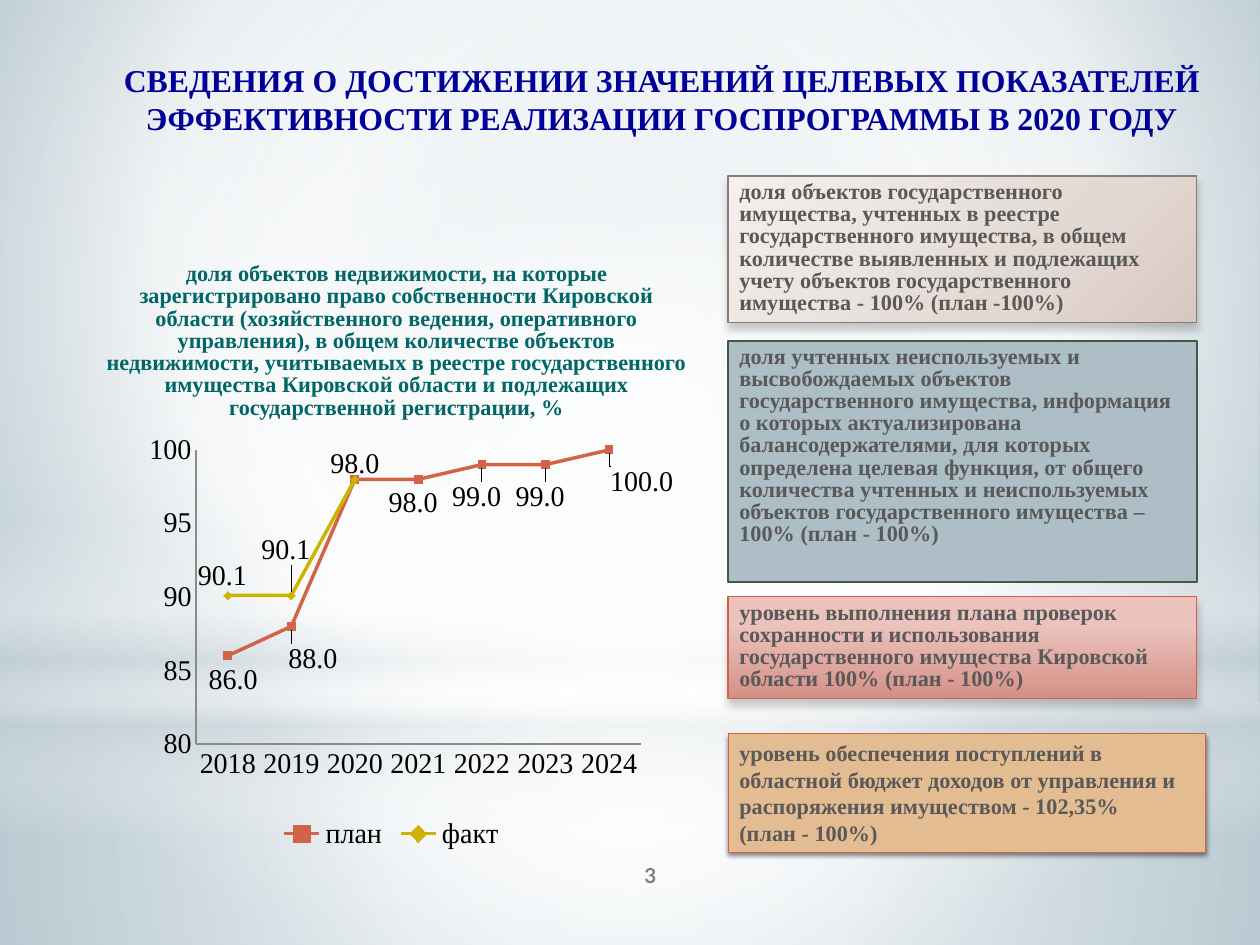
from lxml import etree
from pptx import Presentation
from pptx import util as u
from pptx.chart.data import CategoryChartData
from pptx.dml.color import RGBColor
from pptx.enum import chart as ch, shapes, text
from pptx.oxml import parse_xml
from pptx.oxml.ns import nsdecls, qn

COLORS = {
    "white": "FFFFFF", "mist": "C5D1D7", "bg_inner": "B8CAD3", "bg_outer": "8FAEBD",
    "title": "000099", "chart_title": "006666", "body": "595959", "number": "808080",
    "black": "000000", "axis": "8B8B8B", "plan": "D16349", "fact": "CCB400",
    "sand_dark": "D7C9C1", "sand_mid": "E3D9D3", "sand_light": "F4F0EE", "sand_line": "8C7B70",
    "blue_grey": "ADBEC6", "green_line": "445843",
    "pink": "ECC2BD", "rose": "D49087", "orange": "E3BC92",
}
RGB = {name: RGBColor.from_string(value) for name, value in COLORS.items()}
SERIF = "Times New Roman"


def set_gradient(properties, stops, angle=None, focus=(50, 50, 50, 50)):
    """Swap an empty fill for a linear (angle) or circular (focus) gradient."""
    marks = "".join(
        f'<a:gs pos="{pos * 1000}"><a:srgbClr val="{COLORS[color]}">'
        f'<a:alpha val="{alpha * 1000}"/></a:srgbClr></a:gs>'
        for pos, color, alpha in stops)
    if angle is None:
        left, top, right, bottom = (side * 1000 for side in focus)
        course = (f'<a:path path="circle"><a:fillToRect l="{left}" t="{top}" '
                  f'r="{right}" b="{bottom}"/></a:path>')
    else:
        course = f'<a:lin ang="{angle * 60000}" scaled="0"/>'
    empty = properties.find(qn("a:noFill"))
    properties.replace(empty, parse_xml(
        f'<a:gradFill {nsdecls("a")} rotWithShape="1"><a:gsLst>{marks}</a:gsLst>{course}</a:gradFill>'))


def write(shape, paragraphs, size, color, font=SERIF, align=text.PP_ALIGN.LEFT,
          spacing=None, before=0, anchor=text.MSO_ANCHOR.TOP, side=0.1, edge=0.05):
    frame = shape.text_frame
    frame.text = "\n".join(paragraphs)
    frame_format = {"word_wrap": True, "vertical_anchor": anchor,
                    "margin_left": u.Inches(side), "margin_right": u.Inches(side),
                    "margin_top": u.Inches(edge), "margin_bottom": u.Inches(edge)}
    for key, value in frame_format.items():
        setattr(frame, key, value)
    font_format = {"size": u.Pt(size), "name": font, "bold": True}
    for paragraph in frame.paragraphs:
        paragraph.alignment = align
        paragraph.space_before = u.Pt(before)
        if spacing:
            paragraph.line_spacing = u.Pt(spacing)
        for run in paragraph.runs:
            for key, value in font_format.items():
                setattr(run.font, key, value)
            run.font.color.rgb = RGB[color]


# Slide of 28 by 21 cm
deck = Presentation()
deck.slide_width, deck.slide_height = u.Inches(28 / 2.54), u.Inches(21 / 2.54)
slide = deck.slides.add_slide(deck.slide_layouts[6])

# Background and its light layers
slide.background.fill.background()
set_gradient(slide.element.find(".//" + qn("p:bgPr")),
             [(0, "bg_inner", 100), (60, "white", 100), (100, "bg_outer", 100)],
             focus=(20, 10, 20, 60))
RECT, OVAL = shapes.MSO_SHAPE.RECTANGLE, shapes.MSO_SHAPE.OVAL
layers = [
    (RECT, 6.15, 2.11, [(0, "white", 91), (37, "white", 76), (100, "mist", 79)], None),
    (RECT, 0, 6.15, [(0, "white", 89), (48, "white", 62), (100, "mist", 79)], None),
    (RECT, 4.54, 2.76, [(0, "white", 0), (29, "white", 30), (45, "mist", 40),
                        (55, "white", 26), (65, "mist", 60), (100, "white", 0)], 90),
    (OVAL, 1.93, 6.15, [(0, "white", 100), (56, "white", 0)], None),
]
for outline, top, height, stops, angle in layers:
    layer = slide.shapes.add_shape(outline, 0, u.Inches(top), deck.slide_width, u.Inches(height))
    layer.shadow.inherit = False
    layer.line.fill.background()
    layer.fill.background()
    set_gradient(layer.element.spPr, stops, angle)

# Title, chart heading and page number
CENTER = text.PP_ALIGN.CENTER
captions = [
    ((0.83, 0.47, 9.92, 0.78),
     "СВЕДЕНИЯ О ДОСТИЖЕНИИ ЗНАЧЕНИЙ ЦЕЛЕВЫХ ПОКАЗАТЕЛЕЙ ЭФФЕКТИВНОСТИ РЕАЛИЗАЦИИ "
     "ГОСПРОГРАММЫ В 2020 ГОДУ",
     {"size": 20, "color": "title", "side": 0.11, "edge": 0.06}),
    ((0.83, 2.26, 5.28, 1.48),
     "доля объектов недвижимости, на которые зарегистрировано право собственности Кировской "
     "области (хозяйственного ведения, оперативного управления), в общем количестве объектов "
     "недвижимости, учитываемых в реестре государственного имущества Кировской области и "
     "подлежащих государственной регистрации, %",
     {"size": 14, "color": "chart_title", "spacing": 14, "before": 3}),
    ((4.59, 7.44, 2.2, 0.44), "3",
     {"size": 13, "color": "number", "font": "Lato", "anchor": text.MSO_ANCHOR.MIDDLE}),
]
for place, words, style in captions:
    caption = slide.shapes.add_textbox(*map(u.Inches, place))
    write(caption, [words], align=CENTER, **style)

# Indicator boxes: place, fill, line, shadow (opacity, blur, distance), text
TIGHT = {"spacing": 14, "before": 3}
indicators = [
    (1.54, 4.1, 1.28,
     ([(0, "sand_dark", 100), (35, "sand_mid", 100), (100, "sand_light", 100)], 225),
     "sand_line", 0.75, (20, 5, 4), TIGHT,
     ["доля объектов государственного имущества, учтенных в реестре государственного имущества, "
      "в общем количестве выявленных и подлежащих учету объектов государственного имущества - "
      "100% (план -100%)"]),
    (2.98, 4.1, 2.11, "blue_grey", "green_line", 1.25, None, TIGHT,
     ["доля учтенных неиспользуемых и высвобождаемых объектов государственного имущества, "
      "информация о которых актуализирована балансодержателями, для которых определена целевая "
      "функция, от общего количества учтенных и неиспользуемых объектов государственного "
      "имущества – 100% (план - 100%)"]),
    (5.22, 4.1, 0.89, ([(28, "pink", 100), (100, "rose", 100)], 90),
     "plan", 0.75, (20, 5, 4), TIGHT,
     ["уровень выполнения плана проверок сохранности и использования государственного имущества "
      "Кировской области 100% (план - 100%)"]),
    (6.42, 4.18, 1.04, "orange", "plan", 0.75, (45, 3.1, 1.8), {},
     ["уровень обеспечения поступлений в областной бюджет доходов от управления и распоряжения "
      "имуществом - 102,35%", "(план - 100%)"]),
]
for top, width, height, fill, line, weight, shade, spacing, words in indicators:
    indicator = slide.shapes.add_shape(RECT, *map(u.Inches, (6.37, top, width, height)))
    indicator.shadow.inherit = False
    if isinstance(fill, str):
        indicator.fill.solid()
        indicator.fill.fore_color.rgb = RGB[fill]
    else:
        indicator.fill.background()
        set_gradient(indicator.element.spPr, *fill)
    indicator.line.color.rgb = RGB[line]
    indicator.line.width = u.Pt(weight)
    if shade:
        opacity, blur, distance = shade
        indicator.element.spPr.find(qn("a:effectLst")).append(parse_xml(
            f'<a:outerShdw {nsdecls("a")} blurRad="{u.Pt(blur)}" dist="{u.Pt(distance)}" '
            f'dir="5400000" rotWithShape="0"><a:srgbClr val="{COLORS["black"]}">'
            f'<a:alpha val="{opacity * 1000}"/></a:srgbClr></a:outerShdw>'))
    write(indicator, words, 14, "body", **spacing)

# Line chart of plan and fact
data = CategoryChartData(number_format="0.0")
data.categories = [str(year) for year in range(2018, 2025)]
data.add_series("план", [86, 88, 98, 98, 99, 99, 100])
data.add_series("факт", [90.1, 90.1, 98, None, None, None, None])
chart = slide.shapes.add_chart(ch.XL_CHART_TYPE.LINE_MARKERS,
                               *map(u.Inches, (1.05, 3.75, 4.84, 3.73)), data).chart
chart.has_title = False
chart.font.size, chart.font.name = u.Pt(18), SERIF
chart.font.color.rgb = RGB["black"]
chart.has_legend = True
chart.legend.position = ch.XL_LEGEND_POSITION.BOTTOM
chart.legend.include_in_layout = False
chart.plots[0].vary_by_categories = False

scale = {"minimum_scale": 80, "maximum_scale": 100, "major_unit": 5, "has_major_gridlines": False}
for key, value in scale.items():
    setattr(chart.value_axis, key, value)
chart.value_axis.tick_labels.number_format = "General"
chart.value_axis.tick_labels.number_format_is_linked = False
for axis in (chart.value_axis, chart.category_axis):
    axis.major_tick_mark = axis.minor_tick_mark = ch.XL_TICK_MARK.NONE
    axis.format.line.color.rgb = RGB["axis"]

# Plot area and label offsets are shares of the chart size
plot_area = chart.element.find(".//" + qn("c:plotArea"))
for old_layout in plot_area.findall(qn("c:layout")):
    plot_area.remove(old_layout)
plot_area.insert(0, parse_xml(
    f'<c:layout {nsdecls("c")}><c:manualLayout><c:layoutTarget val="inner"/>'
    '<c:xMode val="edge"/><c:yMode val="edge"/><c:x val="0.14"/><c:y val="0.05"/>'
    '<c:w val="0.82"/><c:h val="0.69"/></c:manualLayout></c:layout>'))

BELOW, ABOVE = ch.XL_LABEL_POSITION.BELOW, ch.XL_LABEL_POSITION.ABOVE
looks = [
    ("plan", ch.XL_MARKER_STYLE.SQUARE, BELOW,
     {0: (0.01, 0), 1: (0.04, 0.02), 3: (-0.01, 0), 4: (-0.01, 0.02), 5: (-0.01, 0.02),
      6: (0.06, 0.02)}),
    ("fact", ch.XL_MARKER_STYLE.DIAMOND, ABOVE,
     {0: (-0.01, 0.01), 1: (-0.01, -0.05), 2: (0, 0.02)}),
]
for series, (color, marker, position, offsets) in zip(chart.plots[0].series, looks):
    series.smooth = False
    series.format.line.color.rgb = RGB[color]
    series.format.line.width = u.Pt(2.25)
    series.marker.style, series.marker.size = marker, 5
    series.marker.format.fill.solid()
    series.marker.format.fill.fore_color.rgb = RGB[color]
    series.marker.format.line.color.rgb = RGB[color]
    for index in offsets:
        series.points[index].data_label.position = position
    series.data_labels.show_value = False
    label_list = series.data_labels._element
    for label, (dx, dy) in zip(label_list.findall(qn("c:dLbl")), offsets.values()):
        label.find(qn("c:idx")).addnext(parse_xml(
            f'<c:layout {nsdecls("c")}><c:manualLayout><c:x val="{dx}"/><c:y val="{dy}"/>'
            '</c:manualLayout></c:layout>'))
        number_format = etree.Element(qn("c:numFmt"), formatCode="0.0", sourceLinked="0")
        label.find(qn("c:layout")).addnext(number_format)
    # No leader lines from points to moved labels
    label_list.append(parse_xml(
        f'<c:extLst {nsdecls("c")}><c:ext uri="{{CE6537A1-D6FC-4f65-9D91-7224C49458BB}}" '
        'xmlns:c15="http://schemas.microsoft.com/office/drawing/2012/chart">'
        '<c15:showLeaderLines val="0"/></c:ext></c:extLst>'))

deck.save("out.pptx")
